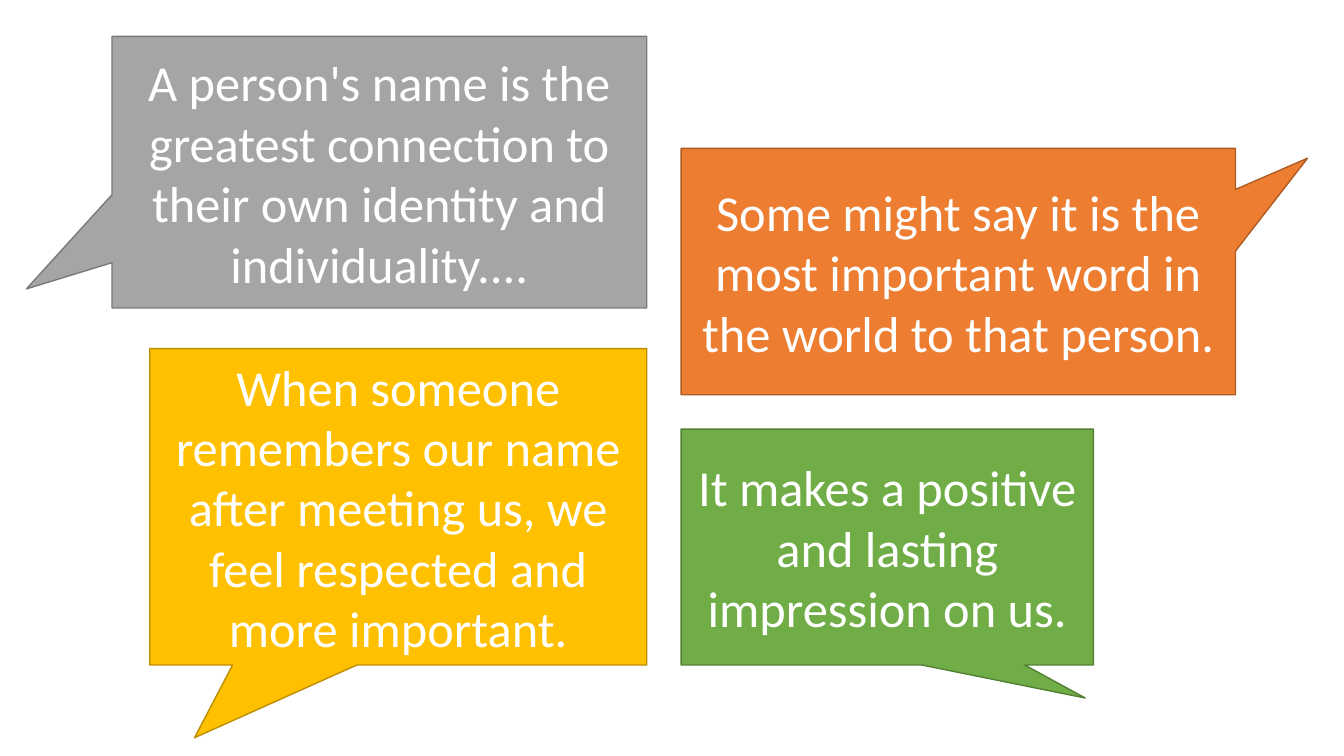
import pptx
import pptx.dml.color
import pptx.enum.shapes
import pptx.enum.text
import pptx.util

Pt = pptx.util.Pt


def color(hex_string):
    return pptx.dml.color.RGBColor.from_string(hex_string)


presentation = pptx.Presentation()
presentation.slide_width = Pt(960)
presentation.slide_height = Pt(540)
slide = presentation.slides.add_slide(presentation.slide_layouts[6])

# Text, (left, top, width, height), tail tip relative to the centre, fill, line
callouts = [
    ("A person's name is the greatest connection to their own identity and individuality....",
     (80, 26, 382, 194), (-0.66, 0.43), "A5A5A5", "7A7A7A"),
    ("Some might say it is the most important word in the world to that person.",
     (486.5, 106, 396, 176), (0.63, -0.46), "ED7D31", "AF5C24"),
    ("When someone remembers our name after meeting us, we feel respected and more important.",
     (107, 249, 355, 226), (-0.41, 0.73), "FFC000", "BD8E00"),
    ("It makes a positive and lasting impression on us.",
     (486.5, 306.5, 294.5, 168.5), (0.48, 0.64), "70AD47", "538035"),
]

for text, box, tail_tip, fill, line in callouts:
    callout = slide.shapes.add_shape(
        pptx.enum.shapes.MSO_SHAPE.RECTANGULAR_CALLOUT, *map(Pt, box))
    callout.shadow.inherit = False
    callout.adjustments[0], callout.adjustments[1] = tail_tip
    callout.fill.solid()
    callout.fill.fore_color.rgb = color(fill)
    callout.line.color.rgb = color(line)
    callout.line.width = Pt(1)

    text_frame = callout.text_frame
    text_frame.word_wrap = True
    text_frame.vertical_anchor = pptx.enum.text.MSO_ANCHOR.MIDDLE
    paragraph = text_frame.paragraphs[0]
    paragraph.text = text
    paragraph.alignment = pptx.enum.text.PP_ALIGN.CENTER
    paragraph.font.name = "Calibri"
    paragraph.font.size = Pt(36)
    paragraph.font.color.rgb = color("FFFFFF")

presentation.save("out.pptx")
